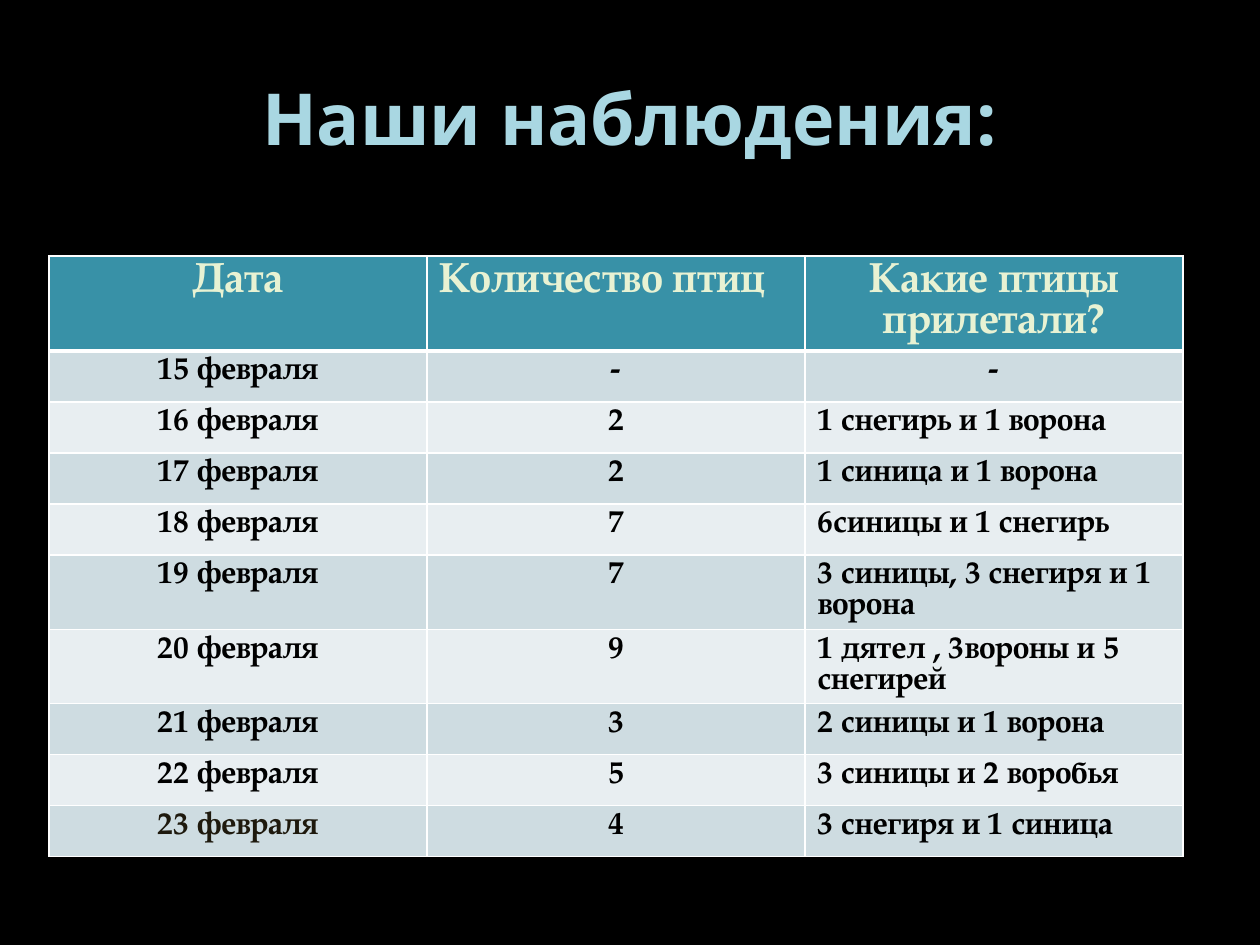
"""Builds a slide with a table of bird observations."""
from lxml import etree
from pptx import Presentation, util as u
from pptx.dml.color import RGBColor
from pptx.enum import text
from pptx.oxml.ns import qn

TITLE = "Наши наблюдения:"
HEADERS = ("Дата", "Количество птиц", "Какие птицы прилетали?")
OBSERVATIONS = [
    ("15 февраля", "-", "-"),
    ("16 февраля", "2", "1 снегирь и 1 ворона"),
    ("17 февраля", "2", "1 синица и 1 ворона"),
    ("18 февраля", "7", "6синицы и 1 снегирь"),
    ("19 февраля", "7", "3 синицы, 3 снегиря и 1 ворона"),
    ("20 февраля", "9", "1 дятел , 3вороны и 5 снегирей"),
    ("21 февраля", "3", "2 синицы и 1 ворона"),
    ("22 февраля", "5", "3 синицы и 2 воробья"),
    ("23 февраля", "4", "3 снегиря и 1 синица"),
]
LEFT_ALIGNED = {HEADERS[1]} | {row[2] for row in OBSERVATIONS[1:]}
LAST_DATE = OBSERVATIONS[-1][0]
BANDS = ("CEDCE1", "E8EEF1")
COLUMN, ROW = 378, 51
TITLE_FONT = {"name": "Open Sans", "size": u.Pt(41), "bold": True}
HEADER_FONT = {"name": "TeX Gyre Pagella", "size": u.Pt(24), "bold": True}
BODY_FONT = {**HEADER_FONT, "size": u.Pt(18)}


def px(value):
    return u.Emu(round(value * 914400 / 126))


def color(code):
    return RGBColor.from_string(code)


def write(frame, words, font, ink, align):
    frame.text = words
    para = frame.paragraphs[0]
    para.alignment = align
    span = para.runs[0]
    for name, value in font.items():
        setattr(span.font, name, value)
    span.font.color.rgb = color(ink)


def add_borders(cell, bottom):
    properties = cell._tc.get_or_add_tcPr()
    widths = {"lnL": 1, "lnR": 1, "lnT": 1, "lnB": bottom}
    for place, (tag, width) in enumerate(widths.items()):
        line = etree.Element(qn(f"a:{tag}"), w=str(u.Pt(width)))
        fill = etree.SubElement(line, qn("a:solidFill"))
        etree.SubElement(fill, qn("a:srgbClr"), val="FFFFFF")
        properties.insert(place, line)


def add_observations(page):
    rows = [HEADERS, *OBSERVATIONS]
    table = page.shapes.add_table(
        len(rows), len(HEADERS), px(49), px(256),
        px(COLUMN * len(HEADERS)), px(ROW * len(rows))).table
    for column in table.columns:
        column.width = px(COLUMN)
    for i, row in enumerate(rows):
        table.rows[i].height = px(ROW)
        for j, words in enumerate(row):
            cell = table.cell(i, j)
            cell.fill.solid()
            cell.fill.fore_color.rgb = color(BANDS[(i - 1) % 2] if i else "3891A7")
            font = BODY_FONT if i else HEADER_FONT
            ink = "E8F2D3" if i == 0 else "1E190D" if words == LAST_DATE else "000000"
            align = text.PP_ALIGN.LEFT if words in LEFT_ALIGNED else text.PP_ALIGN.CENTER
            write(cell.text_frame, words, font, ink, align)
            add_borders(cell, 1 if i else 3)


def main():
    deck = Presentation()
    deck.slide_width, deck.slide_height = px(1260), px(945)
    page = deck.slides.add_slide(deck.slide_layouts[5])
    page.background.fill.solid()
    page.background.fill.fore_color.rgb = color("000000")
    title = page.shapes.title
    title.left, title.top, title.width, title.height = map(px, (63, 38, 1134, 157))
    title.text_frame.vertical_anchor = text.MSO_ANCHOR.MIDDLE
    write(title.text_frame, TITLE, TITLE_FONT, "A9D7E2", text.PP_ALIGN.CENTER)
    add_observations(page)
    deck.save("out.pptx")


if __name__ == "__main__":
    main()
